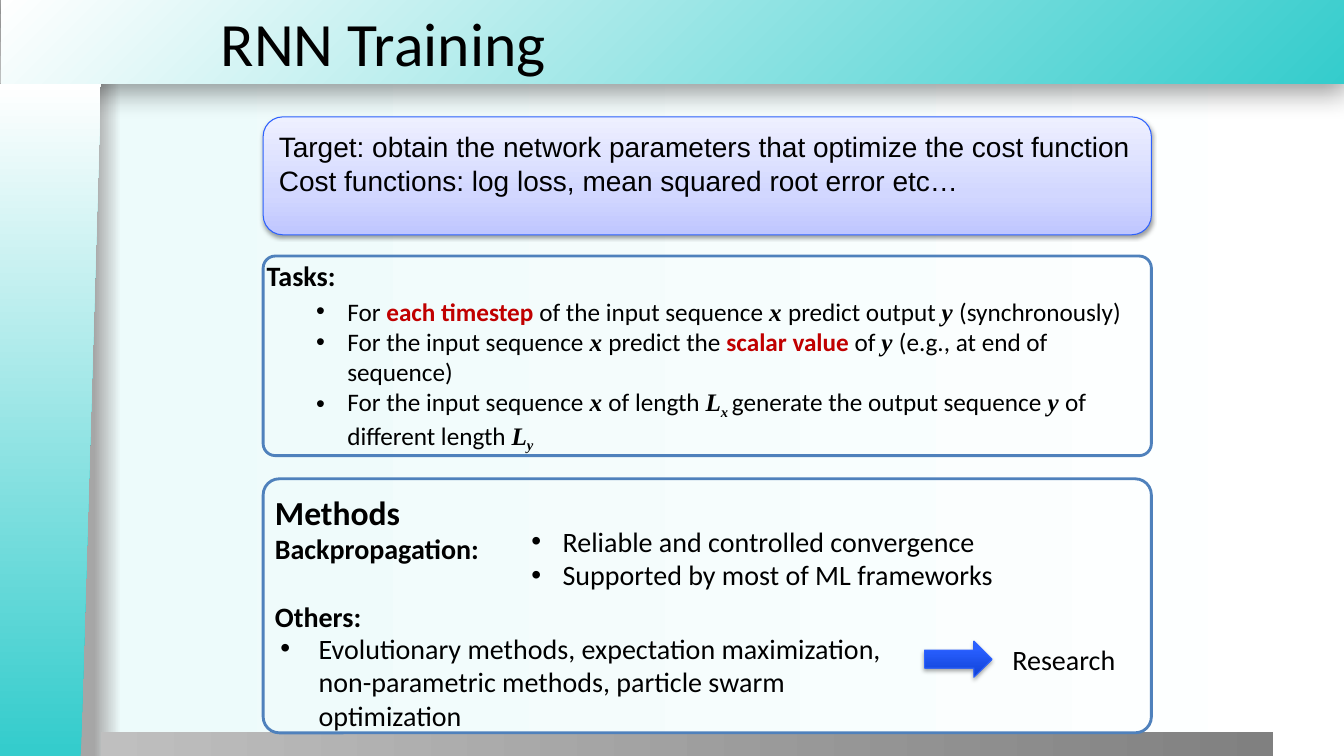
from collections import namedtuple

from lxml import etree
from pptx import Presentation
from pptx.dml.color import RGBColor
from pptx.enum.shapes import MSO_SHAPE
from pptx.enum.text import MSO_ANCHOR, MSO_AUTO_SIZE, PP_ALIGN
from pptx.oxml.ns import qn
from pptx.util import Inches, Pt

RECT, ROUNDED = MSO_SHAPE.RECTANGLE, MSO_SHAPE.ROUNDED_RECTANGLE
SLANTED, ARROW = MSO_SHAPE.FLOWCHART_MANUAL_INPUT, MSO_SHAPE.RIGHT_ARROW
TOP, MIDDLE = MSO_ANCHOR.TOP, MSO_ANCHOR.MIDDLE
LEFT, NO_FIT = PP_ALIGN.LEFT, MSO_AUTO_SIZE.NONE

BLACK = RGBColor(0x00, 0x00, 0x00)
WHITE = RGBColor(0xFF, 0xFF, 0xFF)
RED = RGBColor(0xC0, 0x00, 0x00)
TEAL = RGBColor(0x34, 0xCC, 0xCC)
MINT = RGBColor(0xED, 0xFB, 0xFB)
SILVER = RGBColor(0xBF, 0xBF, 0xBF)
ASH = RGBColor(0xA6, 0xA6, 0xA6)
GRAY = RGBColor(0x80, 0x80, 0x80)
CARD_BLUE = RGBColor(0x4F, 0x81, 0xBC)
EDGE_BLUE = RGBColor(0x2D, 0x61, 0xFE)
LILACS = [(0, RGBColor(0xBF, 0xC6, 0xFF)), (35, RGBColor(0xD2, 0xD7, 0xFF)),
          (100, RGBColor(0xEE, 0xF0, 0xFF))]
BLUES = [(0, RGBColor(0x0F, 0x41, 0xD5)), (80, RGBColor(0x29, 0x5F, 0xFF)),
         (100, RGBColor(0x2B, 0x60, 0xFF))]

Box = namedtuple("Box", "left top width height")

TASKS = [
    [("For ", ""), ("each timestep ", "key"), ("of the input sequence ", ""), ("x ", "var"),
     ("predict output ", ""), ("y ", "var"), ("(synchronously)", "")],
    [("For the input sequence ", ""), ("x ", "var"), ("predict the ", ""),
     ("scalar value ", "key"), ("of ", ""), ("y ", "var"), ("(e.g., at end of sequence)", "")],
    [("For the input sequence ", ""), ("x ", "var"), ("of length ", ""), ("L", "var"),
     ("x ", "sub"), ("generate the output sequence ", ""), ("y ", "var"),
     ("of different length ", ""), ("L", "var"), ("y", "sub")],
]


def inches(box):
    return [Inches(length) for length in box]


def paint_gradient(fill, owner, stops, angle=0, corner=False):
    """Fill with (percent, colour) stops, along an angle or out from the bottom right corner."""
    fill.gradient()
    gradient = next(owner.iter(qn("a:gradFill")))
    stop_list = gradient.find(qn("a:gsLst"))
    for stop in list(stop_list):
        stop_list.remove(stop)
    for percent, color in stops:
        stop = etree.SubElement(stop_list, qn("a:gs"), pos=str(percent * 1000))
        etree.SubElement(stop, qn("a:srgbClr"), val=str(color))
    direction = gradient.find(qn("a:lin"))
    if corner:
        gradient.remove(direction)
        circle = etree.SubElement(gradient, qn("a:path"), path="circle")
        etree.SubElement(circle, qn("a:fillToRect"), l="100000", t="100000")
    else:
        direction.set("ang", str(angle * 60000))


def drop_shadow(shape, opacity, blur, distance):
    effects = shape._element.spPr.find(qn("a:effectLst"))
    shadow = etree.SubElement(effects, qn("a:outerShdw"), blurRad=str(Pt(blur)),
                              dist=str(Pt(distance)), dir="5400000", rotWithShape="0")
    color = etree.SubElement(shadow, qn("a:srgbClr"), val=str(BLACK))
    etree.SubElement(color, qn("a:alpha"), val=str(opacity * 1000))


def add_plain(slide, preset, box, line=None, width=0.75):
    shape = slide.shapes.add_shape(preset, *inches(box))
    shape.shadow.inherit = False
    if line is None:
        shape.line.fill.background()
    else:
        shape.line.color.rgb = line
        shape.line.width = Pt(width)
    return shape


def set_frame(frame, anchor=TOP, insets=(0, 0.01, 0, 0)):
    frame.word_wrap = True
    frame.auto_size = NO_FIT
    frame.vertical_anchor = anchor
    (frame.margin_left, frame.margin_top,
     frame.margin_right, frame.margin_bottom) = inches(insets)


def style_paragraph(paragraph, size, font="Calibri", bold=False, before=0):
    paragraph.alignment = LEFT
    paragraph.space_before = Pt(before)
    for run in paragraph.runs:
        run.font.size, run.font.name, run.font.bold = Pt(size), font, bold
        run.font.color.rgb = BLACK


def add_bullet(paragraph, margin, hanging):
    properties = paragraph._p.get_or_add_pPr()
    properties.set("marL", str(Inches(margin)))
    properties.set("indent", str(-Inches(hanging)))
    etree.SubElement(properties, qn("a:buFont"), typeface="Arial")
    etree.SubElement(properties, qn("a:buChar"), char="•")


def add_backdrop(slide):
    paint_gradient(slide.background.fill, slide._element, [(7, ASH), (9, MINT), (100, WHITE)])
    header = add_plain(slide, RECT, Box(0.01, 0, 13.34, 0.83))
    paint_gradient(header.fill, header._element, [(0, TEAL), (100, WHITE)], corner=True)
    drop_shadow(header, 40, 20, 6)
    side_panel = add_plain(slide, SLANTED, Box(-2.84, 3.67, 6.68, 1))
    side_panel.rotation = 270
    side_panel._element.spPr.find(qn("a:xfrm")).set("flipV", "1")
    paint_gradient(side_panel.fill, side_panel._element, [(1, TEAL), (100, WHITE)])
    footer = add_plain(slide, RECT, Box(1, 7.26, 11.63, 0.25))
    paint_gradient(footer.fill, footer._element, [(0, SILVER), (100, GRAY)])


def raise_placeholder(slide, placeholder, box):
    """Move a placeholder to its box, in front of the shapes drawn so far."""
    (placeholder.left, placeholder.top,
     placeholder.width, placeholder.height) = inches(box)
    slide.shapes._spTree.append(placeholder._element)


def place_title(slide, box):
    title = slide.shapes.title
    raise_placeholder(slide, title, box)
    title.text_frame.text = "RNN Training"
    set_frame(title.text_frame, MIDDLE, (0.1, 0.05, 0.1, 0.05))
    style_paragraph(title.text_frame.paragraphs[0], 44)


def place_list(slide, placeholder, box, items, margin, hanging):
    raise_placeholder(slide, placeholder, box)
    frame = placeholder.text_frame
    frame.text = "\n".join(items)
    set_frame(frame)
    for paragraph in frame.paragraphs:
        style_paragraph(paragraph, 20)
        add_bullet(paragraph, margin, hanging)


def add_target(slide, box):
    target = add_plain(slide, ROUNDED, box, EDGE_BLUE)
    paint_gradient(target.fill, target._element, LILACS, 270)
    drop_shadow(target, 38, 3.1, 1.6)
    frame = target.text_frame
    frame.text = ("Target: obtain the network parameters that optimize the cost function\n"
                  "Cost functions: log loss, mean squared root error etc…")
    set_frame(frame, insets=(0.1, 0.07, 0.05, 0.05))
    for paragraph in frame.paragraphs:
        style_paragraph(paragraph, 20, "Arial")


def add_card(slide, box, radius):
    card = add_plain(slide, ROUNDED, box, CARD_BLUE, 2.04)
    card.adjustments[0] = radius / box.height
    card.fill.background()
    return card


def add_tasks(slide, box):
    frame = add_card(slide, box, 0.12).text_frame
    set_frame(frame, MIDDLE, (0, 0, 0, 0))
    frame.text = "Tasks:"
    style_paragraph(frame.paragraphs[0], 20, bold=True)
    for number, pieces in enumerate(TASKS):
        paragraph = frame.add_paragraph()
        paragraph.level = 1
        for words, _ in pieces:
            paragraph.add_run().text = words
        style_paragraph(paragraph, 18, before=0 if number else 3)
        add_bullet(paragraph, 0.8, 0.31)
        for run, (_, kind) in zip(paragraph.runs, pieces):
            run.font.bold = kind != ""
            if kind == "key":
                run.font.color.rgb = RED
            elif kind:
                run.font.name, run.font.italic = "Times New Roman", True
            if kind == "sub":
                run._r.get_or_add_rPr().set("baseline", "-21000")


def add_methods(slide, box):
    frame = add_card(slide, box, 0.16).text_frame
    frame.text = "Methods\nBackpropagation:\nOthers:"
    set_frame(frame, insets=(0.07, 0.08, 0.07, 0.07))
    for paragraph, size, before in zip(frame.paragraphs, (24, 20, 20), (0, 0, 24)):
        style_paragraph(paragraph, size, bold=True, before=before)

    left, top = box.left, box.top
    benefits, others = slide.placeholders[1], slide.placeholders[2]
    place_list(slide, benefits, Box(left + 2.64, top + 0.44, 5.48, 0.69),
               ["Reliable and controlled convergence", "Supported by most of ML frameworks"],
               0.33, 0.31)
    place_list(slide, others, Box(left + 0.16, top + 1.5, 6.31, 1.02),
               ["Evolutionary methods, expectation maximization, "
                "non-parametric methods, particle swarm optimization"], 0.39, 0.38)

    arrow = add_plain(slide, ARROW, Box(left + 6.56, top + 1.61, 0.67, 0.36), EDGE_BLUE)
    paint_gradient(arrow.fill, arrow._element, BLUES, 270)
    drop_shadow(arrow, 35, 3.1, 1.8)
    research = slide.shapes.add_textbox(*inches(Box(left + 7.43, top + 1.61, 1.05, 0.36)))
    research.text_frame.text = "Research"
    set_frame(research.text_frame)
    style_paragraph(research.text_frame.paragraphs[0], 20, before=1)


def main():
    deck = Presentation()
    deck.slide_width, deck.slide_height = Inches(13.33), Inches(7.5)
    slide = deck.slides.add_slide(deck.slide_layouts.get_by_name("Two Content"))
    add_backdrop(slide)
    place_title(slide, Box(2.09, 0, 11.25, 0.83))
    add_target(slide, Box(2.61, 1.16, 8.81, 1.17))
    add_tasks(slide, Box(2.61, 2.54, 8.81, 1.98))
    add_methods(slide, Box(2.61, 4.75, 8.81, 2.52))
    deck.save("out.pptx")


if __name__ == "__main__":
    main()
